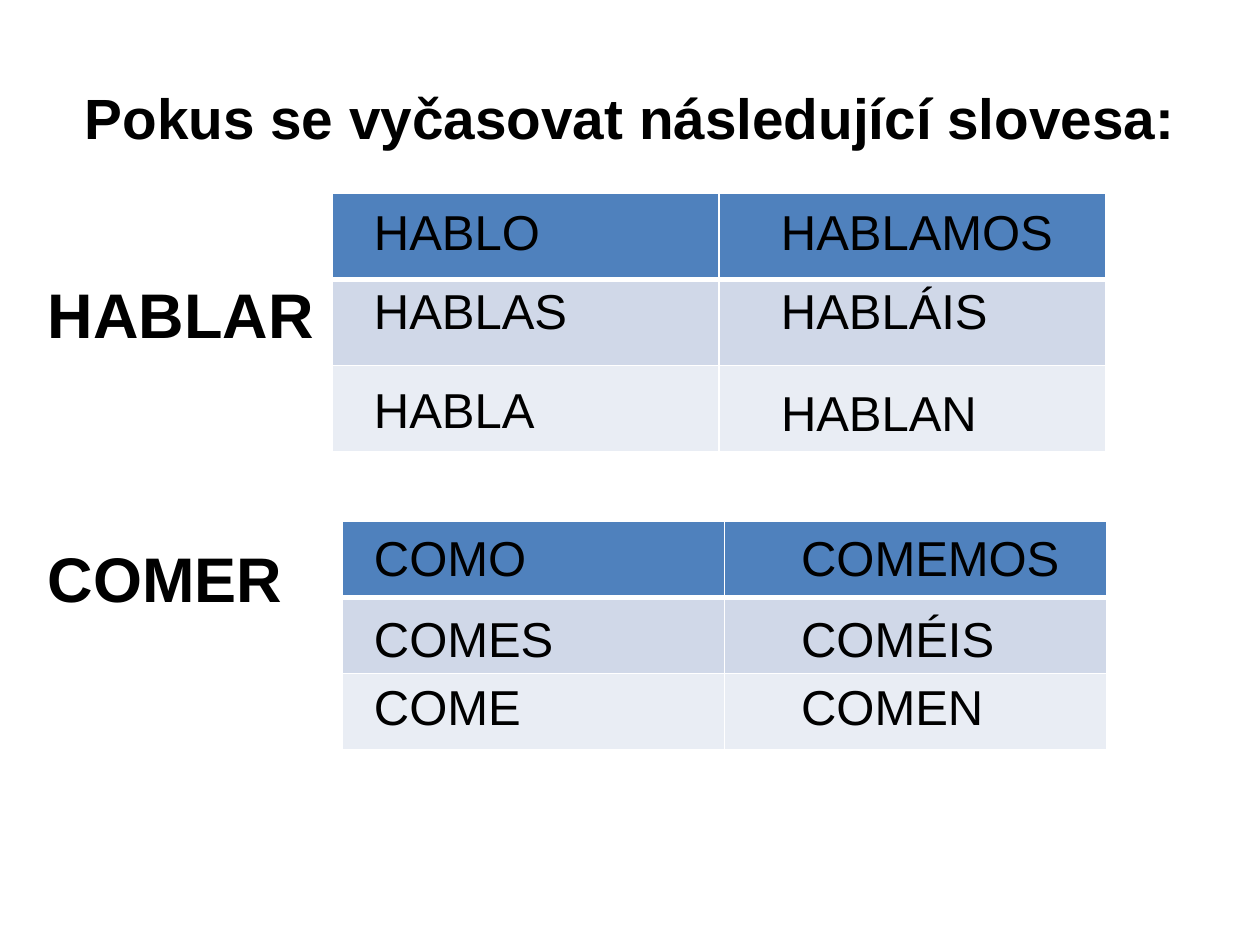
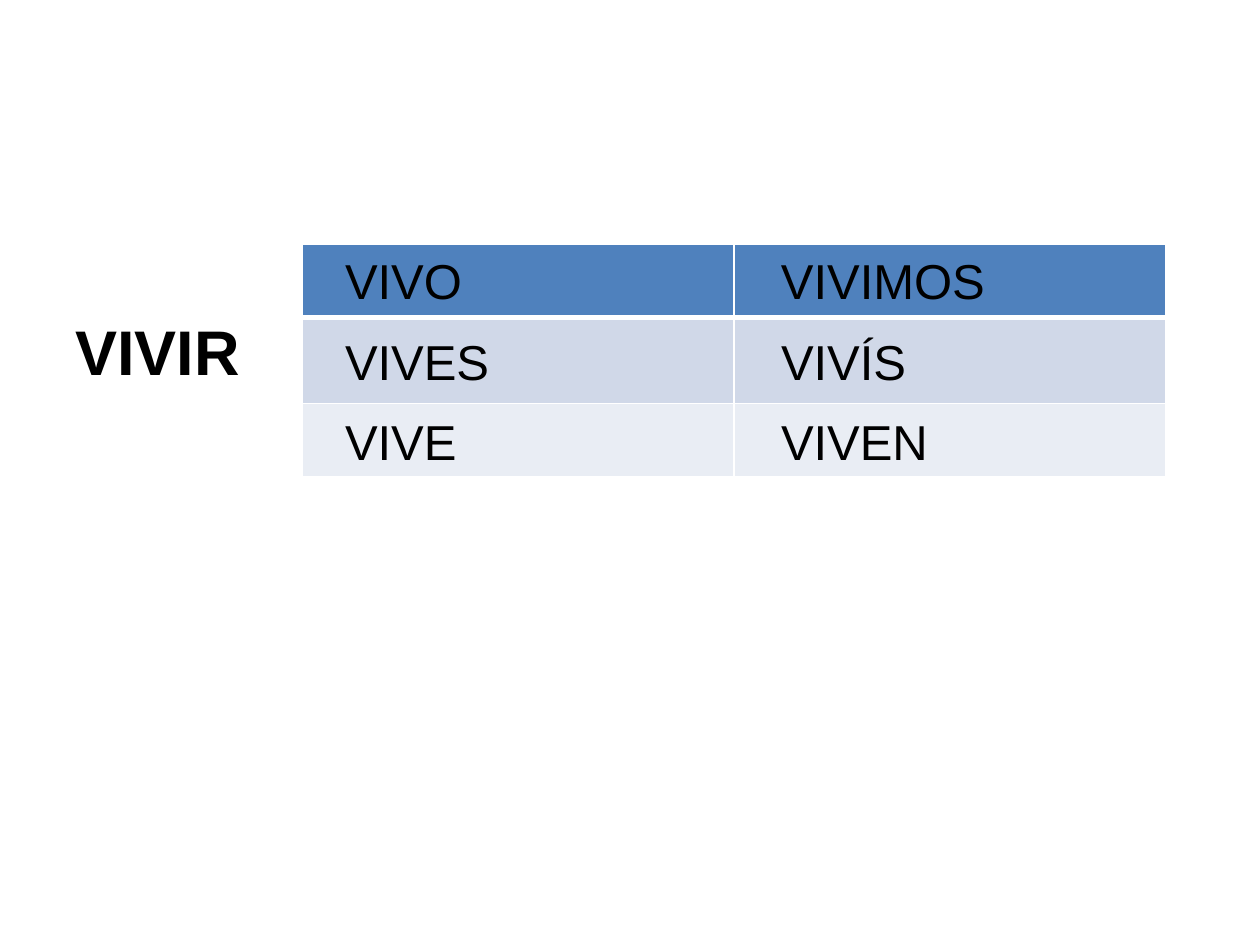
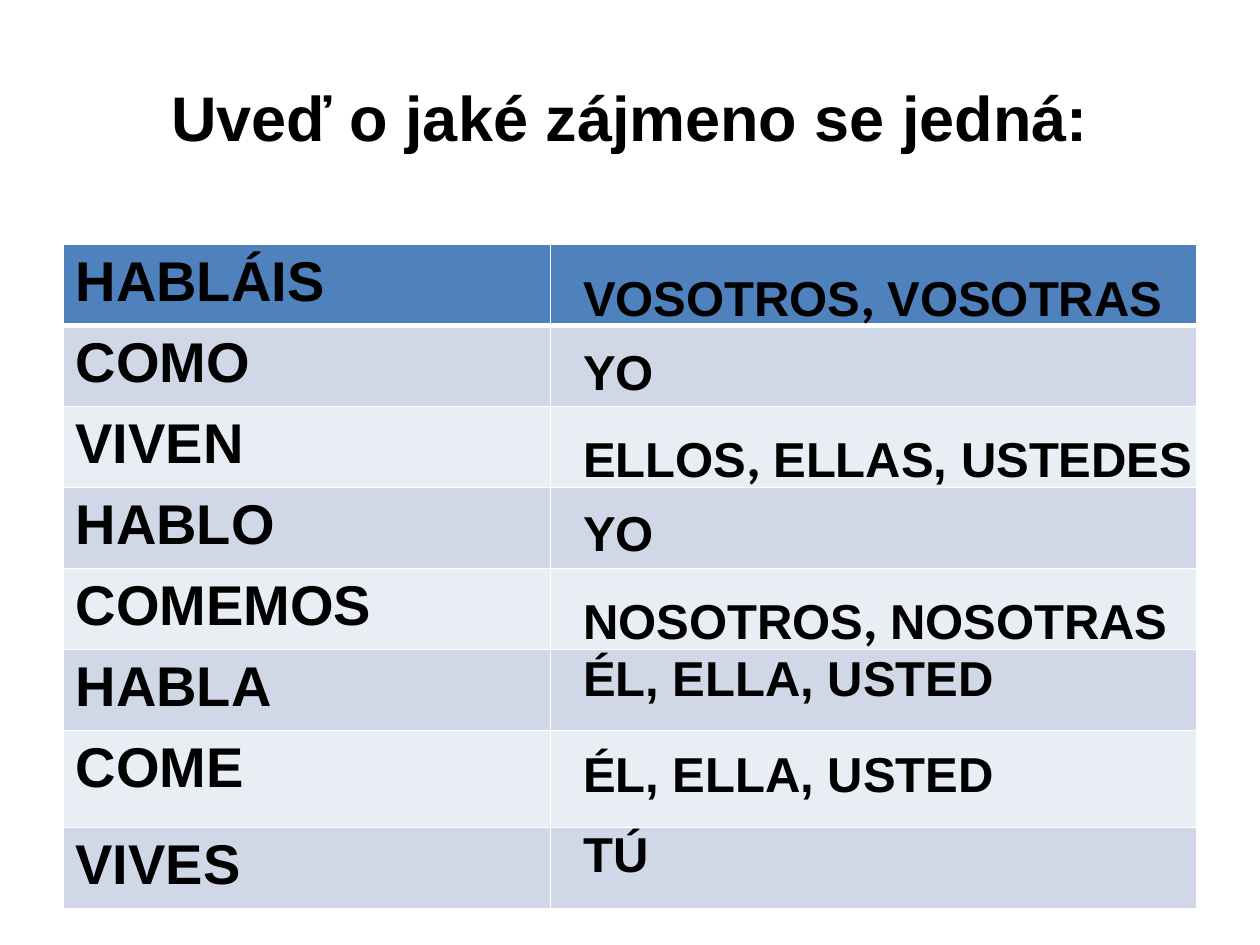
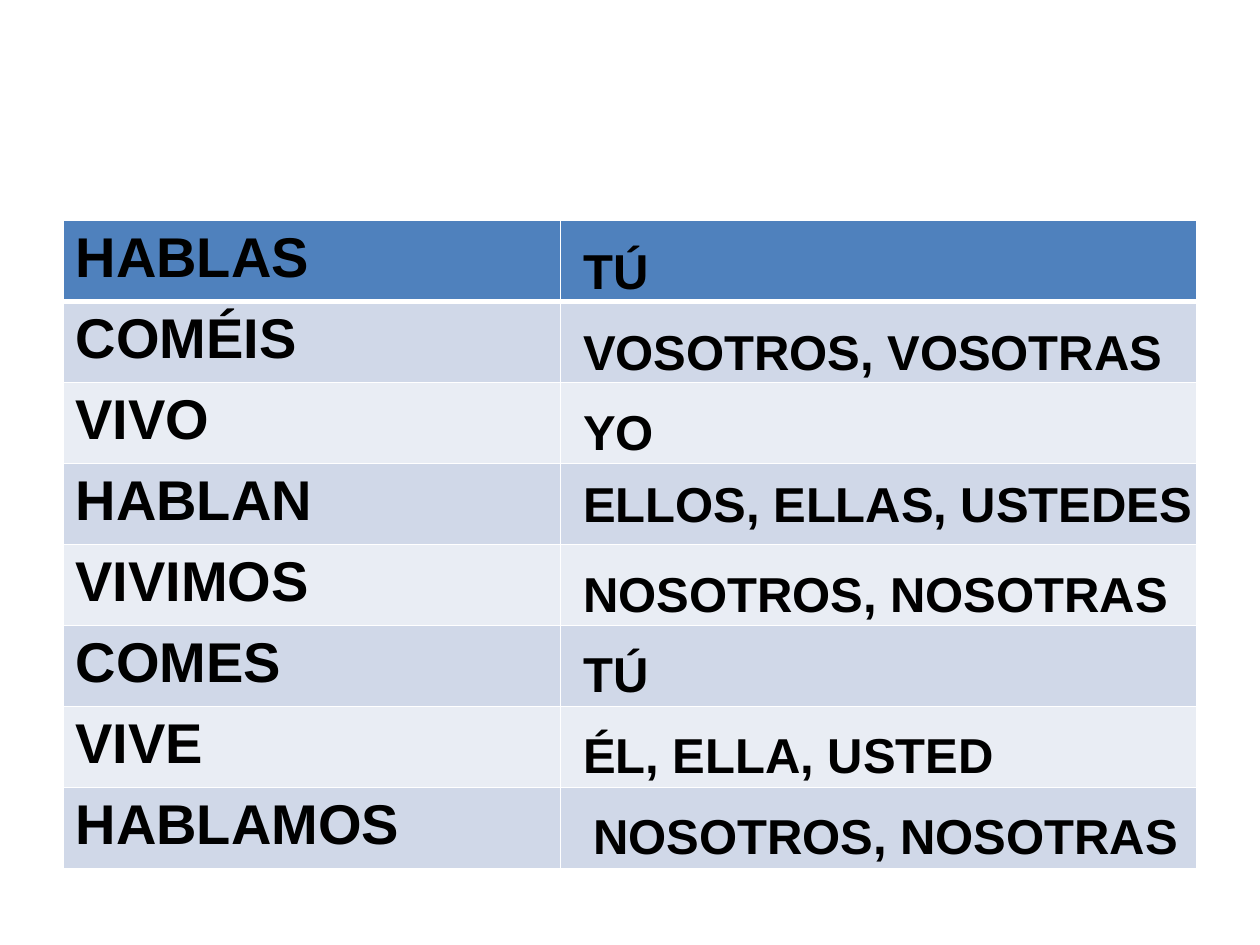
from pptx import Presentation
from pptx.dml.color import RGBColor
from pptx.enum import text as tx
from pptx.oxml import parse_xml
from pptx.oxml.ns import nsdecls
from pptx.util import Pt

tint = RGBColor.from_string
BLACK, WHITE = "000000", "FFFFFF"
HEAD, BANDS = "4F81BD", ("D0D8E8", "E9EDF4")
FONT = "Arial"


def write(slide, words, x, y, w, size=28, bold=False):
    """Add a line of text; pieces between bars are set in larger Calibri."""
    parts = words.split("|")
    high = 46.1 if len(parts) > 1 else size * 1.15 + 9
    box = slide.shapes.add_textbox(Pt(x), Pt(y), Pt(w), Pt(high))
    frame = box.text_frame
    frame.word_wrap = True
    frame.auto_size = tx.MSO_AUTO_SIZE.SHAPE_TO_FIT_TEXT
    for i, part in enumerate(parts):
        run = frame.paragraphs[0].add_run()
        run.text = part
        font = run.font
        font.name = "Calibri" if i % 2 else FONT
        font.size = Pt(32 if i % 2 else size)
        font.bold = bold
        font.color.rgb = tint(BLACK)


def grid(slide, x, y, cols, rows, verbs=()):
    """Add a two-column banded table, with verbs down its first column."""
    shape = slide.shapes.add_table(len(rows), len(cols), Pt(x), Pt(y),
                                   Pt(sum(cols)), Pt(sum(rows)))
    table = shape.table
    for col, wide in zip(table.columns, cols):
        col.width = Pt(wide)
    for r, (row, high) in enumerate(zip(table.rows, rows)):
        row.height = Pt(high)
        for cell in row.cells:
            props = cell._tc.get_or_add_tcPr()
            for side in "LRTB":
                thick = 3 if (r, side) in ((0, "B"), (1, "T")) else 1
                props.append(parse_xml(
                    f'<a:ln{side} {nsdecls("a")} w="{Pt(thick)}"><a:solidFill>'
                    f'<a:srgbClr val="{WHITE}"/></a:solidFill></a:ln{side}>'))
            cell.fill.solid()
            cell.fill.fore_color.rgb = tint(BANDS[(r - 1) % 2] if r else HEAD)
    for r, verb in enumerate(verbs):
        para = table.cell(r, 0).text_frame.paragraphs[0]
        para.text = verb
        font = para.runs[0].font
        font.name, font.size, font.bold = FONT, Pt(32), True
        font.color.rgb = tint(BLACK)


deck = Presentation()
deck.slide_width, deck.slide_height = Pt(720), Pt(540)

# Slides, with a title where there is one
titles = [("Pokus se vyčasovat následující slovesa:", 32.4), None,
          ("Uveď o jaké zájmeno se jedná:", 36), None]
pages = []
for title in titles:
    page = deck.slides.add_slide(deck.slide_layouts[5 if title else 6])
    pages.append(page)
    if title:
        words, size = title
        head = page.shapes.title
        head.left, head.top, head.width, head.height = Pt(36), Pt(21.6), Pt(648), Pt(90)
        frame = head.text_frame
        frame.text = words
        frame.vertical_anchor = tx.MSO_ANCHOR.MIDDLE
        para = frame.paragraphs[0]
        para.alignment = tx.PP_ALIGN.CENTER
        font = para.runs[0].font
        font.name, font.size, font.bold = FONT, Pt(size), True
        font.color.rgb = tint(BLACK)

# Conjugations: page, verb and its place, table place, column width, rows, forms
sets = [
    (0, "HABLAR", 20.2, 154.1, 190, 110.2, 221, (49.4, 49.4, 49.4), [
        ("HABLO", 206.6, 111.6, 164.2), ("HABLAS", 206.6, 157, 164.2),
        ("HABLA", 206.6, 213.1, 118.8), ("HABLAMOS", 439.2, 111.6, 175.7),
        ("HABLÁIS", 439.2, 157, 175.7), ("HABLAN", 439.2, 215.3, 147.6)]),
    (0, "COMER", 20.2, 304.9, 195.8, 298.1, 218.2, (43.4, 43.4, 43.4), [
        ("COMO", 206.6, 298.1, 193), ("COMES", 206.6, 344.2, 193),
        ("COME", 206.6, 383, 193), ("COMEMOS", 450.7, 298.1, 164.2),
        ("COMÉIS", 450.7, 344.2, 164.2), ("COMEN", 450.7, 383, 147.6)]),
    (1, "VIVIR", 36, 175.2, 172.8, 139.7, 246.6, (41.8, 49, 41.8), [
        ("VIVO", 190.1, 139.7, 198.7), ("VIVES", 190.1, 185.8, 198.7),
        ("VIVE", 190.1, 231.8, 198.7), ("VIVIMOS", 439.2, 139.7, 187.2),
        ("VIVÍS", 439.2, 185.8, 136.1), ("VIVEN", 439.2, 231.8, 136.1)]),
]
for n, verb, vx, vy, x, y, wide, rows, forms in sets:
    write(pages[n], verb, vx, vy, x - vx, 36, True)
    grid(pages[n], x, y, (wide, wide), rows)
    for form in forms:
        write(pages[n], *form)

# Pronouns: page, table top, column widths, rows, then verb and its answer
ROW = 46.3
quiz = [
    (2, 139.7, (278.6, 369.4), [ROW] * 6 + [55.4, ROW], [
        ("HABLÁIS", "VOSOTROS|, |VOSOTRAS", 326.2, 145.4, 393.8),
        ("COMO", "YO", 326.2, 191.5, 260.6),
        ("VIVEN", "ELLOS|, |ELLAS, USTEDES", 326.2, 237.6, 425.5),
        ("HABLO", "YO", 326.2, 283.7, 226.8),
        ("COMEMOS", "NOSOTROS|, |NOSOTRAS", 326.2, 329.8, 393.8),
        ("HABLA", "ÉL, ELLA, USTED", 326.2, 366.5, 357.1),
        ("COME", "ÉL, ELLA, USTED", 326.2, 421.2, 311.8),
        ("VIVES", "TÚ", 326.2, 467.3, 334.8)]),
    (3, 126, (284.4, 363.6), [ROW] * 8, [
        ("HABLAS", "TÚ", 326.2, 133.9, 272.2),
        ("COMÉIS", "VOSOTROS, VOSOTRAS", 326.2, 180, 393.8),
        ("VIVO", "YO", 326.2, 226.1, 300.2),
        ("HABLAN", "ELLOS, ELLAS, USTEDES", 326.2, 267.1, 402.5),
        ("VIVIMOS", "NOSOTROS, NOSOTRAS", 326.2, 318.2, 385.2),
        ("COMES", "TÚ", 326.2, 364.3, 368.6),
        ("VIVE", "ÉL, ELLA, USTED", 326.2, 410.4, 351.4),
        ("HABLAMOS", "NOSOTROS, NOSOTRAS", 331.9, 456.5, 388.1)]),
]
for n, y, cols, rows, pairs in quiz:
    grid(pages[n], 36, y, cols, rows, [pair[0] for pair in pairs])
    for verb, *reply in pairs:
        write(pages[n], *reply, bold=True)

deck.save("out.pptx")
